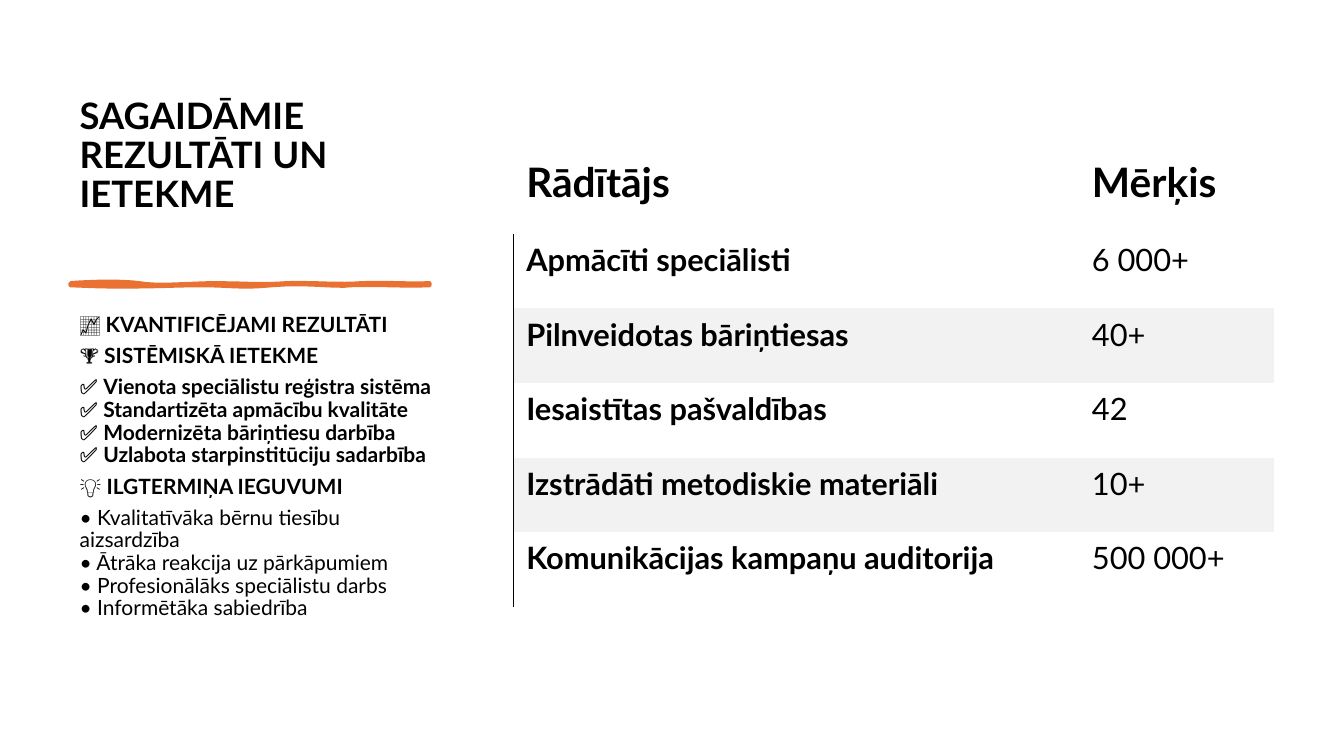
from copy import deepcopy

from lxml.etree import SubElement
from pptx import Presentation
from pptx.dml.color import RGBColor
from pptx.enum.text import MSO_ANCHOR as ANCHOR, MSO_AUTO_SIZE as AUTO, PP_ALIGN as ALIGN
from pptx.oxml.ns import qn
from pptx.util import Emu, Pt

PX = 9144
FINE = 10
NO_STYLE = "{2D5ABB26-0587-4C30-8999-92F81FD0307C}"
COLORS = {"text": "000000", "accent": "E97132", "band": "F2F2F2"}

TITLE = "SAGAIDĀMIE REZULTĀTI UN IETEKME"
CHECKS = [
    "Vienota speciālistu reģistra sistēma",
    "Standartizēta apmācību kvalitāte",
    "Modernizēta bāriņtiesu darbība",
    "Uzlabota starpinstitūciju sadarbība",
]
BENEFITS = [
    "Kvalitatīvāka bērnu tiesību aizsardzība",
    "Ātrāka reakcija uz pārkāpumiem",
    "Profesionālāks speciālistu darbs",
    "Informētāka sabiedrība",
]
BODY = [
    [[("📈 KVANTIFICĒJAMI REZULTĀTI", True)]],
    [[("🏆 SISTĒMISKĀ IETEKME", True)]],
    [[("✅ ", False), (check, True)] for check in CHECKS],
    [[("💡 ILGTERMIŅA IEGUVUMI", True)]],
    [[("• " + benefit, False)] for benefit in BENEFITS],
]
ROWS = [
    ("Rādītājs", "Mērķis"),
    ("Apmācīti speciālisti", "6 000+"),
    ("Pilnveidotas bāriņtiesas", "40+"),
    ("Iesaistītas pašvaldības", "42"),
    ("Izstrādāti metodiskie materiāli", "10+"),
    ("Komunikācijas kampaņu auditorija", "500 000+"),
]
STROKE_START = (70, 281)
STROKE_CURVES = [
    ((97, 279), (121, 279), (138, 281)),
    ((155, 284), (177, 282), (209, 281)),
    ((241, 281), (260, 283), (284, 281)),
    ((308, 280), (339, 283), (359, 281)),
    ((379, 280), (412, 282), (426, 281)),
    ((426, 282), (426, 283), (426, 283)),
    ((408, 284), (364, 282), (348, 283)),
    ((332, 285), (304, 280), (270, 283)),
    ((235, 286), (231, 283), (199, 283)),
    ((166, 283), (132, 286), (70, 283)),
]


def px(n):
    return Emu(n * PX)


def color(name):
    return RGBColor.from_string(COLORS[name])


def curve_points(start, curves, steps=8):
    points = [start]
    for c1, c2, end in curves:
        p0 = points[-1]
        for i in range(1, steps + 1):
            t = i / steps
            u = 1 - t
            points.append(tuple(
                u**3 * a + 3 * u * u * t * b + 3 * u * t * t * c + t**3 * d
                for a, b, c, d in zip(p0, c1, c2, end)
            ))
    return points


class SlideBuilder:
    font = "Lato"

    def __init__(self, prs):
        self.slide = prs.slides.add_slide(prs.slide_layouts[1])

    def style(self, r, size, bold):
        r.font.name = self.font
        r.font.size = Pt(size)
        r.font.bold = bold
        r.font.color.rgb = color("text")

    def place(self, sp, left, top, width, height):
        sp.left, sp.top, sp.width, sp.height = map(px, (left, top, width, height))
        tf = sp.text_frame
        tf.word_wrap = True
        tf.auto_size = AUTO.NONE
        return tf

    def title(self, text, box, size, bottom):
        tf = self.place(self.slide.shapes.title, *box)
        tf.text = text
        tf.vertical_anchor = ANCHOR.BOTTOM
        tf.margin_bottom = px(bottom)
        p = tf.paragraphs[0]
        p.alignment = ALIGN.LEFT
        p.line_spacing = 0.9
        self.style(p.runs[0], size, True)

    def body(self, paragraphs, box, size):
        tf = self.place(self.slide.placeholders[1], *box)
        for i, lines in enumerate(paragraphs):
            p = tf.add_paragraph() if i else tf.paragraphs[0]
            p.line_spacing = 0.9
            p.space_before = Pt(0)
            p.space_after = Pt(6)
            pPr = p._p.get_or_add_pPr()
            pPr.set("marL", "0")
            pPr.set("indent", "0")
            SubElement(pPr, qn("a:buNone"))
            for j, line in enumerate(lines):
                if j:
                    p.add_line_break()
                for text, bold in line:
                    r = p.add_run()
                    r.text = text
                    self.style(r, size, bold)
            for br in p._p.findall(qn("a:br")):
                br.append(deepcopy(p.runs[0]._r.rPr))

    def brush_stroke(self, points, name, weight):
        fine = [(round(x * FINE), round(y * FINE)) for x, y in points]
        fb = self.slide.shapes.build_freeform(*fine[0], scale=PX / FINE)
        fb.add_line_segments(fine[1:], close=True)
        sp = fb.convert_to_shape()
        sp.shadow.inherit = False
        sp.fill.solid()
        sp.fill.fore_color.rgb = color(name)
        sp.line.color.rgb = color(name)
        sp.line.width = Pt(weight)
        SubElement(sp.line._get_or_add_ln(), qn("a:round"))

    def left_border(self, cell, weight):
        tcPr = cell._tc.get_or_add_tcPr()
        ln = SubElement(tcPr, qn("a:lnL"), w=str(Pt(weight)))
        fill = SubElement(ln, qn("a:solidFill"))
        SubElement(fill, qn("a:srgbClr"), val=COLORS["text"])
        tcPr.insert(0, ln)

    def table(self, rows, left, top, widths, heights):
        frame = self.slide.shapes.add_table(
            len(rows), len(widths), px(left), px(top), px(sum(widths)), px(sum(heights)))
        table = frame.table
        table.horz_banding = False
        table._tbl.tblPr.find(qn("a:tableStyleId")).text = NO_STYLE
        for col, width in zip(table.columns, widths):
            col.width = px(width)
        for i, (values, height) in enumerate(zip(rows, heights)):
            table.rows[i].height = px(height)
            for j, value in enumerate(values):
                self.cell(table.cell(i, j), value, i, j)

    def cell(self, cell, value, row, col):
        cell.text = value
        cell.margin_left, cell.margin_top = px(13), px(4)
        cell.margin_right, cell.margin_bottom = px(29), px(27)
        cell.vertical_anchor = ANCHOR.MIDDLE if row else ANCHOR.BOTTOM
        r = cell.text_frame.paragraphs[0].runs[0]
        self.style(r, 22 if row else 29, row == 0 or col == 0)
        if row and row % 2 == 0:
            cell.fill.solid()
            cell.fill.fore_color.rgb = color("band")
        else:
            cell.fill.background()
        if row and col == 0:
            self.left_border(cell, 0.75)


def main():
    prs = Presentation()
    prs.slide_width, prs.slide_height = px(1333), px(750)
    s = SlideBuilder(prs)
    s.title(TITLE, (69, 70, 375, 188), size=26, bottom=44)
    s.brush_stroke(curve_points(STROKE_START, STROKE_CURVES), "accent", weight=3)
    s.body(BODY, (69, 307, 375, 373), size=15)
    s.table(ROWS, 509, 146, widths=[561, 194], heights=[86] + [74] * 5)
    prs.save("out.pptx")


if __name__ == "__main__":
    main()
